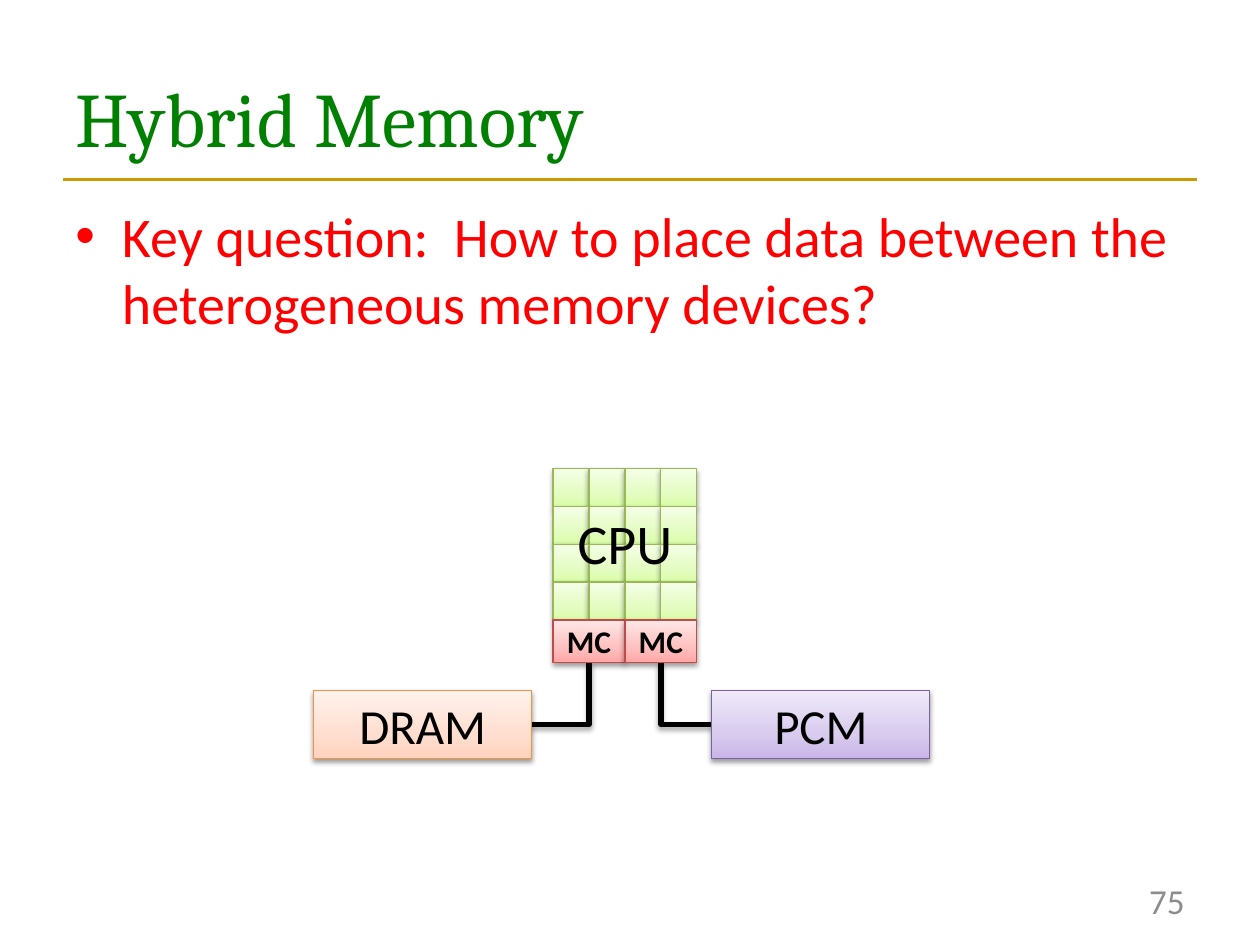
from collections import namedtuple
from copy import deepcopy
from dataclasses import dataclass

from lxml import etree
from pptx import Presentation
from pptx import util as u
from pptx.dml.color import RGBColor
from pptx.enum import shapes, text
from pptx.oxml import ns

Box = namedtuple("Box", "x y w h")
Paint = namedtuple("Paint", "stops line")


@dataclass(frozen=True)
class Theme:
    heading: str = "Cambria"
    body: str = "Calibri"
    title: str = "008000"
    rule: str = "CC9900"
    question: str = "FF0000"
    ink: str = "000000"
    number: str = "8C8C8C"
    core: Paint = Paint(("DAFDA7", "E4FCC2", "F5FFE7"), "98B955")
    controller: Paint = Paint(("FFA6A5", "FFC0BF", "FFE7E7"), "BF4C48")
    dram: Paint = Paint(("FFD2BD", "FFDED0", "FFF2ED"), "F69240")
    pcm: Paint = Paint(("C9B5E8", "D8CBEE", "F0EAF9"), "7D60A0")
    title_size: int = 44
    body_size: int = 32
    device_size: int = 28
    number_size: int = 20
    controller_size: int = 18


T = Theme()
W, H = 10, 7.5
MARGIN = 0.05 * W
ALIGN, ANCHOR = text.PP_ALIGN, text.MSO_ANCHOR


def inches(*values):
    return [u.Inches(v) for v in values]


def write(sp, words, size, color=T.ink, font=T.body, align=ALIGN.CENTER,
          anchor=ANCHOR.MIDDLE, bold=False):
    tf = sp.text_frame
    tf.word_wrap = True
    tf.vertical_anchor = anchor
    p = tf.paragraphs[0]
    p.text = words
    p.alignment = align
    f = p.runs[0].font
    f.name, f.size, f.bold = font, u.Pt(size), bold
    f.color.rgb = RGBColor.from_string(color)
    return p


def add_text(s, box, *args, **style):
    return write(s.shapes.add_textbox(*inches(*box)), *args, **style)


def set_effects(sp, shadow=None):
    """Give a shape or connector a soft shadow below it, or none; shadow is (distance pt, opacity %)."""
    effects = etree.SubElement(sp._element.spPr, ns.qn("a:effectLst"))
    if shadow:
        distance, opacity = shadow
        outer = etree.SubElement(effects, ns.qn("a:outerShdw"), blurRad=str(u.Pt(3.1)),
                                 dist=str(u.Pt(distance)), dir="5400000", rotWithShape="0")
        color = etree.SubElement(outer, ns.qn("a:srgbClr"), val=T.ink)
        etree.SubElement(color, ns.qn("a:alpha"), val=str(opacity * 1000))


def add_block(s, box, paint, words=None, size=None, bold=False):
    sp = s.shapes.add_shape(shapes.MSO_SHAPE.RECTANGLE, *inches(*box))
    sp.fill.gradient()
    sp.fill.gradient_angle = 90
    stop_list = sp._element.spPr.find(".//" + ns.qn("a:gsLst"))
    stop_list.append(deepcopy(stop_list[-1]))
    for stop, position, color in zip(sp.fill.gradient_stops, (0, 0.35, 1), paint.stops):
        stop.position = position
        stop.color.rgb = RGBColor.from_string(color)
    sp.line.color.rgb = RGBColor.from_string(paint.line)
    sp.line.width = u.Pt(0.75)
    set_effects(sp, (1.6, 38))
    if words:
        write(sp, words, size, bold=bold)


def style_line(c, color, width):
    c.line.color.rgb = RGBColor.from_string(color)
    c.line.width = u.Pt(width)


def add_bus(s, x1, y1, x2, y2):
    """Run one bend down from (x1, y1), then sideways to (x2, y2)."""
    length, depth = y2 - y1, abs(x2 - x1)
    left = (x1 + x2 - length) / 2
    top = (y1 + y2 - depth) / 2
    to_right = x2 > x1
    ends = (left + length, left) if to_right else (left, left + length)
    c = s.shapes.add_connector(shapes.MSO_CONNECTOR.ELBOW,
                               *inches(ends[0], top, ends[1], top + depth))
    spPr = c._element.spPr
    spPr.find(ns.qn("a:prstGeom")).set("prst", "bentConnector2")
    spPr.find(ns.qn("a:xfrm")).set("rot", str((270 if to_right else 90) * 60000))
    style_line(c, T.ink, 3)
    set_effects(c, (1.8, 35))


def add_header(s, box):
    add_text(s, box, "Hybrid Memory", T.title_size, T.title, T.heading, ALIGN.LEFT)
    y = box.y + 0.9 * box.h
    c = s.shapes.add_connector(shapes.MSO_CONNECTOR.STRAIGHT,
                               *inches(box.x, y, box.x + box.w, y))
    style_line(c, T.rule, 2.25)
    set_effects(c)


def add_question(s, box):
    p = add_text(s, box,
                 "Key question:  How to place data between the heterogeneous memory devices?",
                 T.body_size, T.question, align=ALIGN.LEFT, anchor=ANCHOR.TOP)
    pPr = p._p.get_or_add_pPr()
    indent = u.Inches(0.37)
    pPr.set("marL", str(indent))
    pPr.set("indent", str(-indent))
    etree.SubElement(pPr, ns.qn("a:buFont"), typeface="Arial")
    etree.SubElement(pPr, ns.qn("a:buChar"), char="•")


def add_cpu(s, box, n=4):
    """Draw n by n cores over a row of two memory controllers."""
    controller_h = 0.34
    cw, ch = box.w / n, (box.h - controller_h) / n
    for row in range(n):
        for col in range(n):
            add_block(s, Box(box.x + col * cw, box.y + row * ch, cw, ch), T.core)
    add_text(s, Box(box.x, box.y + 0.9 * ch, box.w, 0.64), "CPU", T.body_size,
             anchor=ANCHOR.TOP)
    for side in range(2):
        add_block(s, Box(box.x + side * box.w / 2, box.y + n * ch, box.w / 2, controller_h),
                  T.controller, "MC", T.controller_size, True)


def add_memory_system(s, box):
    device_w, device_h = 1.73, 0.54
    cpu = Box(box.x + 1.9, box.y, 1.14, 1.54)
    y = box.y + box.h - device_h
    middle = y + device_h / 2
    dram = Box(box.x, y, device_w, device_h)
    pcm = Box(box.x + box.w - device_w, y, device_w, device_h)
    bottom = cpu.y + cpu.h
    add_bus(s, cpu.x + cpu.w / 4, bottom, dram.x + device_w, middle)
    add_bus(s, cpu.x + cpu.w * 3 / 4, bottom, pcm.x, middle)
    add_block(s, dram, T.dram, "DRAM", T.device_size)
    add_block(s, pcm, T.pcm, "PCM", T.device_size)
    add_cpu(s, cpu)


def main():
    prs = Presentation()
    prs.slide_width, prs.slide_height = inches(W, H)
    s = prs.slides.add_slide(prs.slide_layouts[6])
    content_w = W - 2 * MARGIN
    add_header(s, Box(MARGIN, 0.04 * H, content_w, 1.25))
    add_question(s, Box(MARGIN, 1.55, content_w, 5.15))
    add_memory_system(s, Box(2.49, 3.72, 4.89, 2.3))
    add_text(s, Box(W - MARGIN - 2.33, 6.95, 2.33, 0.4), "75", T.number_size, T.number,
             align=ALIGN.RIGHT)
    prs.save("out.pptx")


if __name__ == "__main__":
    main()
